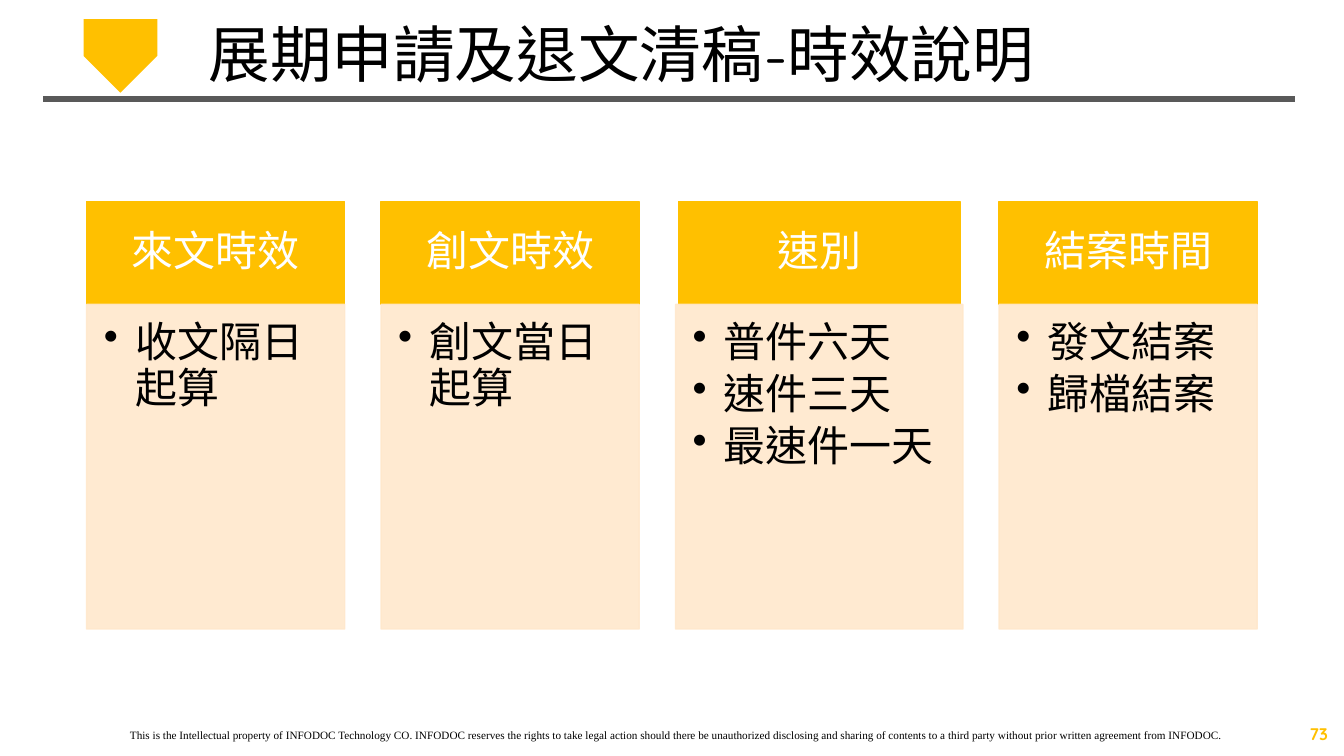
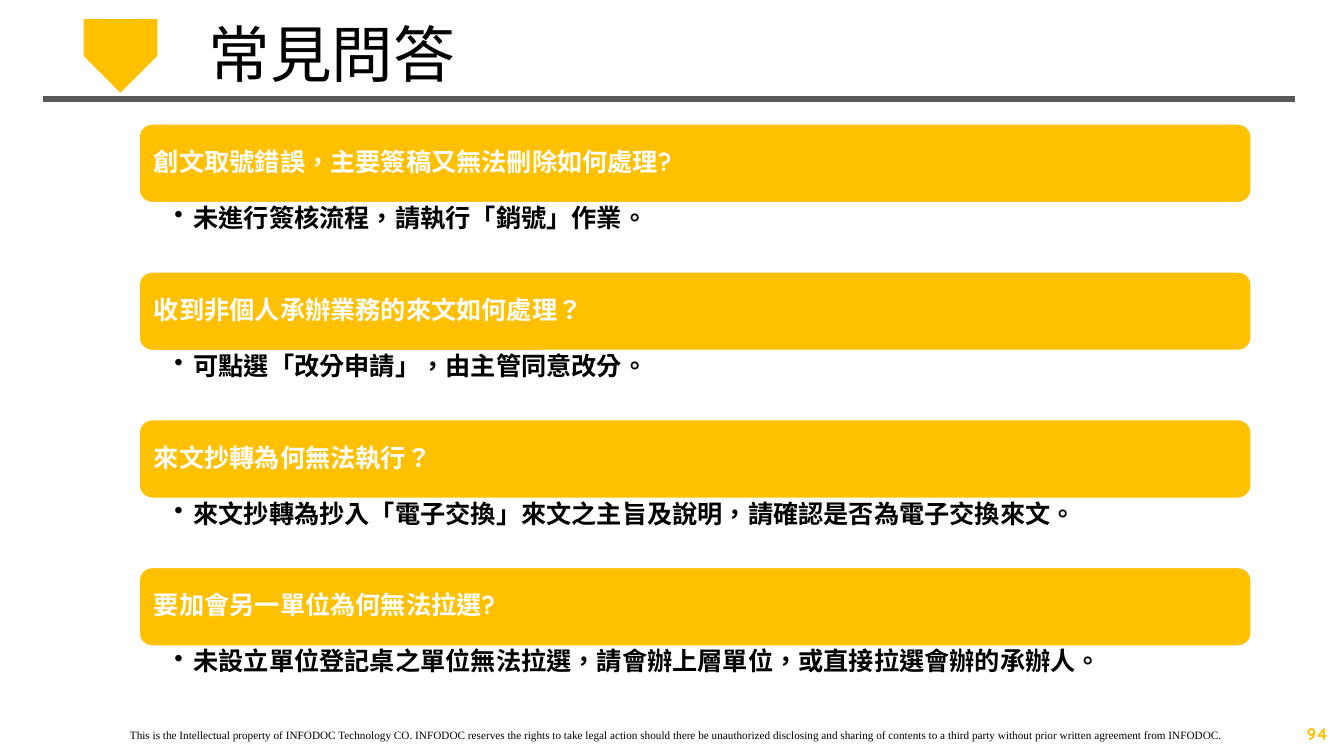
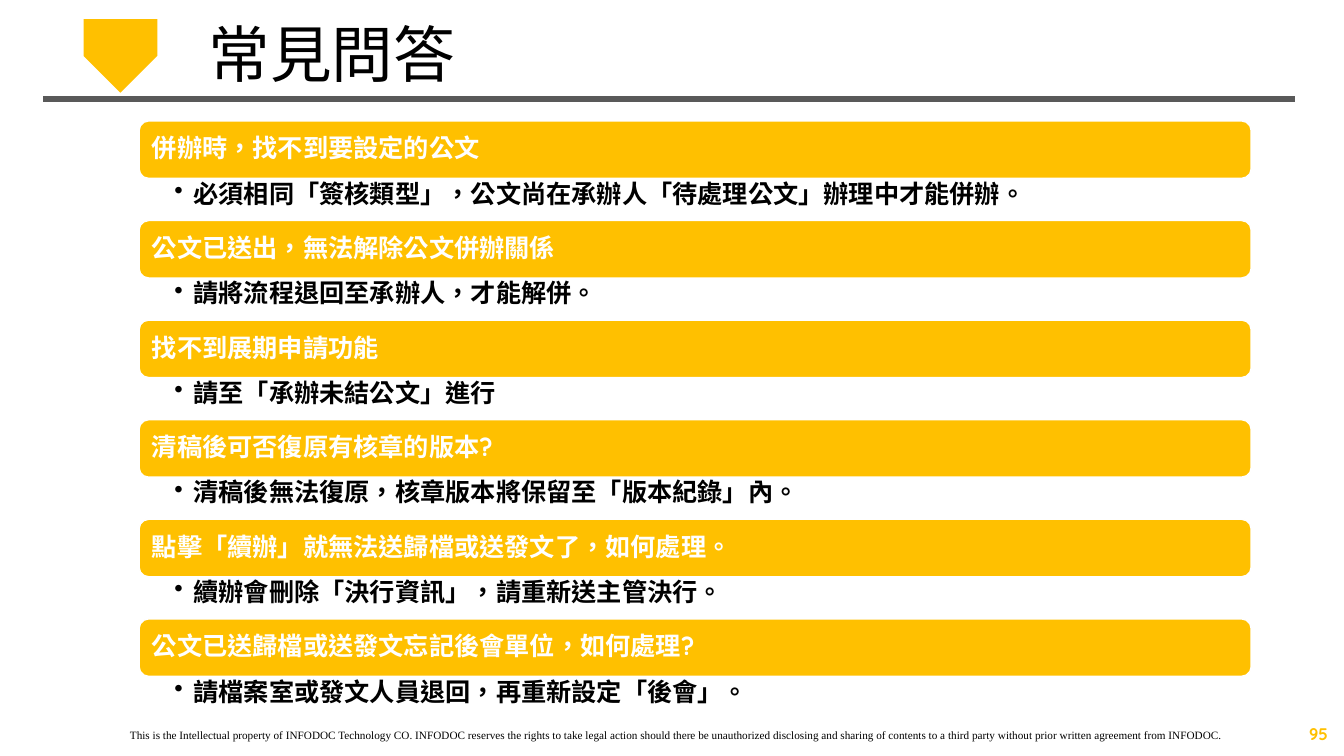
from lxml.etree import SubElement
from pptx import Presentation
from pptx.dml.color import RGBColor
from pptx.enum.lang import MSO_LANGUAGE_ID as Language
from pptx.enum.shapes import MSO_CONNECTOR as Connector, MSO_SHAPE as Shape
from pptx.enum.text import MSO_ANCHOR as Anchor, PP_ALIGN as Align
from pptx.oxml.ns import qn
from pptx.util import Inches, Pt

COLORS = {
    "gold": "FFC000",
    "cream": "FFE8CC",
    "gray": "595959",
    "black": "000000",
    "white": "FFFFFF",
}
FONT = "Quicksand"
FOOTER = (
    "This is the Intellectual property of INFODOC Technology CO. INFODOC reserves the rights "
    "to take legal action should there be unauthorized disclosing and sharing of contents to a "
    "third party without prior written agreement from INFODOC."
)

DEADLINES = [
    {"head": "來文時效", "items": ["收文隔日起算"], "width": 2.56, "head_width": 2.56},
    {"head": "創文時效", "items": ["創文當日起算"], "width": 2.56, "head_width": 2.56},
    {"head": "速別", "items": ["普件六天", "速件三天", "最速件一天"], "width": 2.85, "head_width": 2.79},
    {"head": "結案時間", "items": ["發文結案", "歸檔結案"], "width": 2.56, "head_width": 2.56},
]

FAQ_PAGES = [
    {
        "number": 94, "first": 1.23, "last": 5.63, "bar": 0.78, "inset": 0.11,
        "pairs": [
            ("創文取號錯誤，主要簽稿又無法刪除如何處理?", "未進行簽核流程，請執行「銷號」作業。"),
            ("收到非個人承辦業務的來文如何處理？", "可點選「改分申請」，由主管同意改分。"),
            ("來文抄轉為何無法執行？",
             "來文抄轉為抄入「電子交換」來文之主旨及說明，請確認是否為電子交換來文。"),
            ("要加會另一單位為何無法拉選?",
             "未設立單位登記桌之單位無法拉選，請會辦上層單位，或直接拉選會辦的承辦人。"),
        ],
    },
    {
        "number": 95, "first": 1.2, "last": 6.14, "bar": 0.57, "inset": 0.1,
        "pairs": [
            ("併辦時，找不到要設定的公文",
             "必須相同「簽核類型」，公文尚在承辦人「待處理公文」辦理中才能併辦。"),
            ("公文已送出，無法解除公文併辦關係", "請將流程退回至承辦人，才能解併。"),
            ("找不到展期申請功能", "請至「承辦未結公文」進行"),
            ("清稿後可否復原有核章的版本?", "清稿後無法復原，核章版本將保留至「版本紀錄」內。"),
            ("點擊「續辦」就無法送歸檔或送發文了，如何處理。",
             "續辦會刪除「決行資訊」，請重新送主管決行。"),
            ("公文已送歸檔或送發文忘記後會單位，如何處理?",
             "請檔案室或發文人員退回，再重新設定「後會」。"),
        ],
    },
]


def rgb(name):
    return RGBColor.from_string(COLORS[name])


def add_box(slide, kind, left, top, width, height, fill, line=None, alpha=None):
    box = slide.shapes.add_shape(kind, Inches(left), Inches(top), Inches(width), Inches(height))
    box.shadow.inherit = False
    box.fill.solid()
    box.fill.fore_color.rgb = rgb(fill)
    if line:
        box.line.color.rgb = rgb(line)
        box.line.width = Pt(1)
    else:
        box.line.fill.background()
    if alpha:
        for color in box._element.spPr.iter(qn("a:srgbClr")):
            SubElement(color, qn("a:alpha"), val=str(alpha * 1000))
    return box


def add_text_box(slide, left, top, width, height):
    return slide.shapes.add_textbox(Inches(left), Inches(top), Inches(width), Inches(height))


def write(box, *lines, size, color="black", font=FONT, bold=False, align=Align.LEFT,
          anchor=Anchor.TOP, insets=(0.1, 0.05, 0.1, 0.05), spacing=0.9, after=0, indent=None):
    frame = box.text_frame
    frame.word_wrap = True
    frame.vertical_anchor = anchor
    frame.margin_left, frame.margin_top, frame.margin_right, frame.margin_bottom = map(Inches, insets)
    for index, text in enumerate(lines):
        para = frame.add_paragraph() if index else frame.paragraphs[0]
        para.alignment = align
        para.line_spacing = spacing
        para.space_after = Pt(after)
        if indent:
            properties = para._p.get_or_add_pPr()
            properties.set("marL", str(Inches(indent)))
            properties.set("indent", str(-Inches(indent)))
            SubElement(properties, qn("a:buChar"), char="•")
        span = para.add_run()
        span.text = text
        span.font.size = Pt(size)
        span.font.bold = bold
        span.font.color.rgb = rgb(color)
        span.font.name = font
        span.font.language_id = Language.TRADITIONAL_CHINESE
        SubElement(span._r.get_or_add_rPr(), qn("a:ea"), typeface=font)


def start_slide(deck, title, title_width, number):
    slide = deck.slides.add_slide(deck.slide_layouts[6])
    marker = add_box(slide, Shape.SNIP_2_SAME_RECTANGLE, 0.83, 0.19, 0.73, 0.73, "gold")
    marker.adjustments[0] = 0.5
    marker.adjustments[1] = 0
    marker.rotation = 180
    write(add_text_box(slide, 1.19, 7.18, 11.11, 0.24), FOOTER,
          size=8, font="Times New Roman", spacing=1)
    rule = slide.shapes.add_connector(
        Connector.STRAIGHT, Inches(0.43), Inches(0.98), Inches(12.84), Inches(0.98))
    rule.line.color.rgb = rgb("gray")
    rule.line.width = Pt(4.5)
    SubElement(rule._element.spPr, qn("a:effectLst"))
    write(add_text_box(slide, 1.97, 0.19, title_width, 0.66), title, size=44)
    write(add_text_box(slide, 10.27, 7.08, 3, 0.4), str(number), size=12, color="gold",
          bold=True, align=Align.RIGHT, anchor=Anchor.MIDDLE, spacing=1)
    return slide


def build_deadlines(deck):
    slide = start_slide(deck, "展期申請及退文清稿-時效說明", 10.12, 73)
    left, top, head_height, body_height, gap = 0.86, 2, 1.02, 3.22, 0.36
    for column in DEADLINES:
        width, head_width = column["width"], column["head_width"]
        head = add_box(slide, Shape.RECTANGLE, left + (width - head_width) / 2, top,
                       head_width, head_height, "gold", line="gold")
        write(head, column["head"], size=30, color="white", align=Align.CENTER,
              anchor=Anchor.MIDDLE, insets=(0.23, 0.13, 0.23, 0.13))
        body = add_box(slide, Shape.RECTANGLE, left, top + head_height, width, body_height,
                       "cream", line="cream", alpha=90)
        write(body, *column["items"], size=30, insets=(0.17, 0.17, 0.23, 0.26),
              after=4.5, indent=0.31)
        left += width + gap


def build_faq(deck, page):
    slide = start_slide(deck, "常見問答", 4.2, page["number"])
    left, width, bar = 1.38, 11.03, page["bar"]
    pitch = (page["last"] - page["first"]) / (len(page["pairs"]) - 1)
    for index, (question, answer) in enumerate(page["pairs"]):
        top = page["first"] + index * pitch
        band = add_box(slide, Shape.ROUNDED_RECTANGLE, left, top, width, bar, "gold", line="white")
        write(band, question, size=18, color="white", bold=True, anchor=Anchor.MIDDLE,
              insets=(page["inset"],) * 4)
        reply = add_text_box(slide, left, top + bar, width, pitch - bar)
        write(reply, answer, size=18, bold=True, insets=(0.35, 0.03, 0.14, 0.03), indent=0.19)


def main():
    deck = Presentation()
    deck.slide_width, deck.slide_height = Inches(13.33), Inches(7.5)
    build_deadlines(deck)
    for page in FAQ_PAGES:
        build_faq(deck, page)
    deck.save("out.pptx")


if __name__ == "__main__":
    main()
